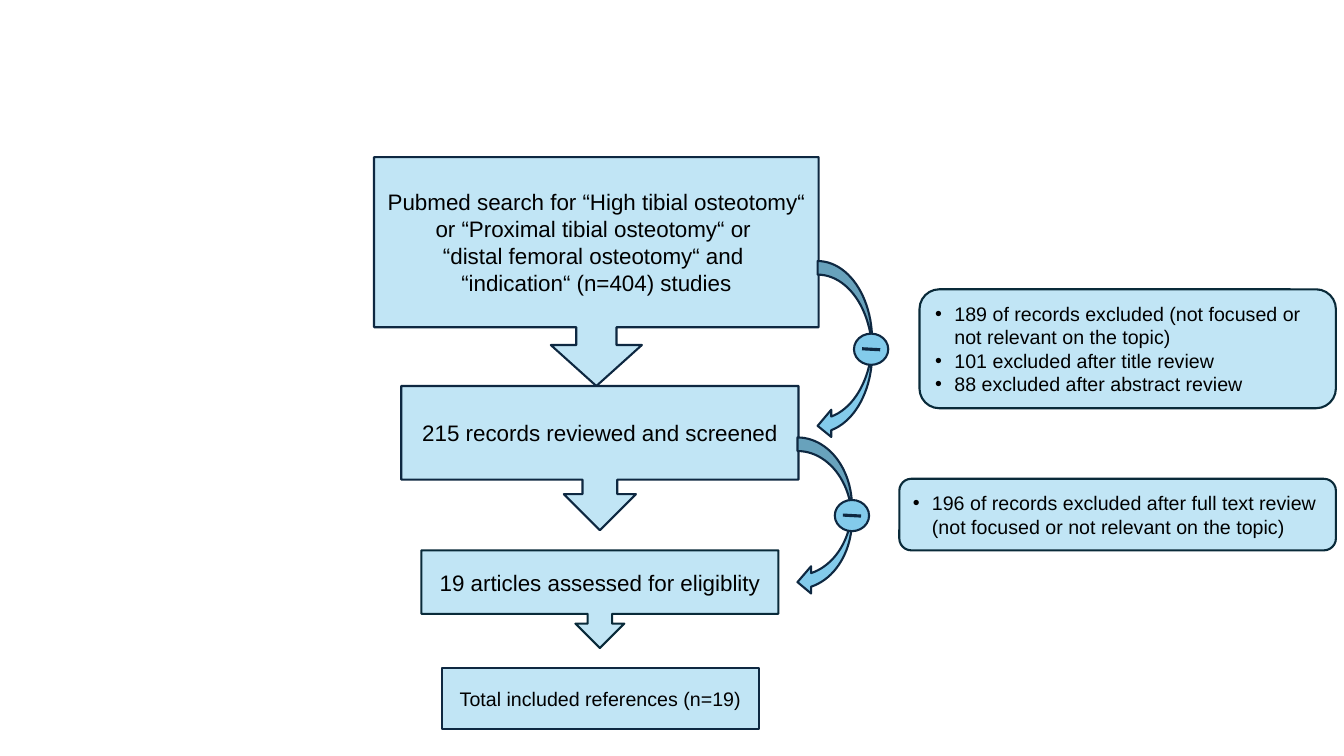
import lxml.etree
import pptx
import pptx.dml.color
import pptx.enum.shapes
import pptx.enum.text
import pptx.oxml.ns
import pptx.util

SCALE = 9144
PALE = "C1E5F5"
SKY = "83CBEB"
NAVY = "0E2841"
TEAL = "092A39"
INK = "000000"
KIND = pptx.enum.shapes.MSO_SHAPE
ALIGN = pptx.enum.text.PP_ALIGN


def px(*nums):
    return [pptx.util.Emu(num * SCALE) for num in nums]


def tint(code):
    return pptx.dml.color.RGBColor.from_string(code)


def node(owner, tag, **attrs):
    return lxml.etree.SubElement(owner, pptx.oxml.ns.qn(tag), **attrs)


def edge(item, color, width):
    item.line.color.rgb = tint(color)
    item.line.width = pptx.util.Pt(width)


def shape(shapes, kind, area, fill=PALE, line=NAVY, adjust=()):
    item = shapes.add_shape(kind, *px(*area))
    item.shadow.inherit = False
    item.fill.solid()
    item.fill.fore_color.rgb = tint(fill)
    edge(item, line, 1.5)
    for spot, value in enumerate(adjust):
        item.adjustments[spot] = value
    return item


def write(item, *lines, size=16, align=ALIGN.CENTER, bullet=False):
    frame = item.text_frame
    frame.word_wrap = True
    frame.vertical_anchor = pptx.enum.text.MSO_ANCHOR.MIDDLE
    for spot, line in enumerate(lines):
        para = frame.add_paragraph() if spot else frame.paragraphs[0]
        para.text = line
        para.alignment = align
        if bullet:
            props = para._p.get_or_add_pPr()
            dent = px(19)[0]
            props.set("marL", str(dent))
            props.set("indent", str(-dent))
            node(props, "a:buFont", typeface="Arial")
            node(props, "a:buChar", char="•")
        para.font.size = pptx.util.Pt(size)
        para.font.name = "Arial"
        para.font.color.rgb = tint(INK)


def step(slide, area, text, line=NAVY, adjust=()):
    item = shape(slide.shapes, KIND.DOWN_ARROW_CALLOUT, area, line=line, adjust=adjust)
    write(item, text)


def minus(slide, left, top):
    group = slide.shapes.add_group_shape()
    shape(group.shapes, KIND.OVAL, (left, top, 34, 31), fill=SKY)
    bar = group.shapes.add_connector(
        pptx.enum.shapes.MSO_CONNECTOR.STRAIGHT,
        *px(left + 8, top + 15, left + 26, top + 16))
    edge(bar, NAVY, 2.25)
    node(bar._element.spPr, "a:effectLst")


def curve(slide, area):
    shape(slide.shapes, KIND.CURVED_LEFT_ARROW, area, fill=SKY)


def note(slide, area, *lines):
    item = shape(slide.shapes, KIND.ROUNDED_RECTANGLE, area, line=TEAL)
    write(item, *lines, size=14, align=ALIGN.LEFT, bullet=True)


def main():
    deck = pptx.Presentation()
    deck.slide_width, deck.slide_height = px(1333, 750)
    slide = deck.slides.add_slide(deck.slide_layouts[6])

    total = shape(slide.shapes, KIND.RECTANGLE, (438, 663, 315, 60))
    write(total, "Total included references (n=19)", size=14)

    step(slide, (371, 156, 441, 227),
         "Pubmed search for “High tibial osteotomy“ or “Proximal tibial osteotomy“ or \v"
         "“distal femoral osteotomy“ and \v“indication“ (n=404) studies",
         adjust=(0.176, 0.199, 0.179, 0.743))
    step(slide, (398, 383, 394, 143), "215 records reviewed and screened",
         adjust=(0.241, 0.25, 0.25, 0.65))
    step(slide, (418, 546, 354, 97), "19 articles assessed for eligiblity", line=TEAL)

    curve(slide, (811, 259, 54, 177))
    minus(slide, 847, 331)
    curve(slide, (791, 434, 54, 157))
    minus(slide, 828, 496)

    note(slide, (912, 287, 413, 118),
         "189 of records excluded (not focused or not relevant on the topic)",
         "101 excluded after title review",
         "88 excluded after abstract review")
    note(slide, (892, 475, 433, 71),
         "196 of records excluded after full text review "
         "(not focused or not relevant on the topic)")

    deck.save("out.pptx")


if __name__ == "__main__":
    main()
